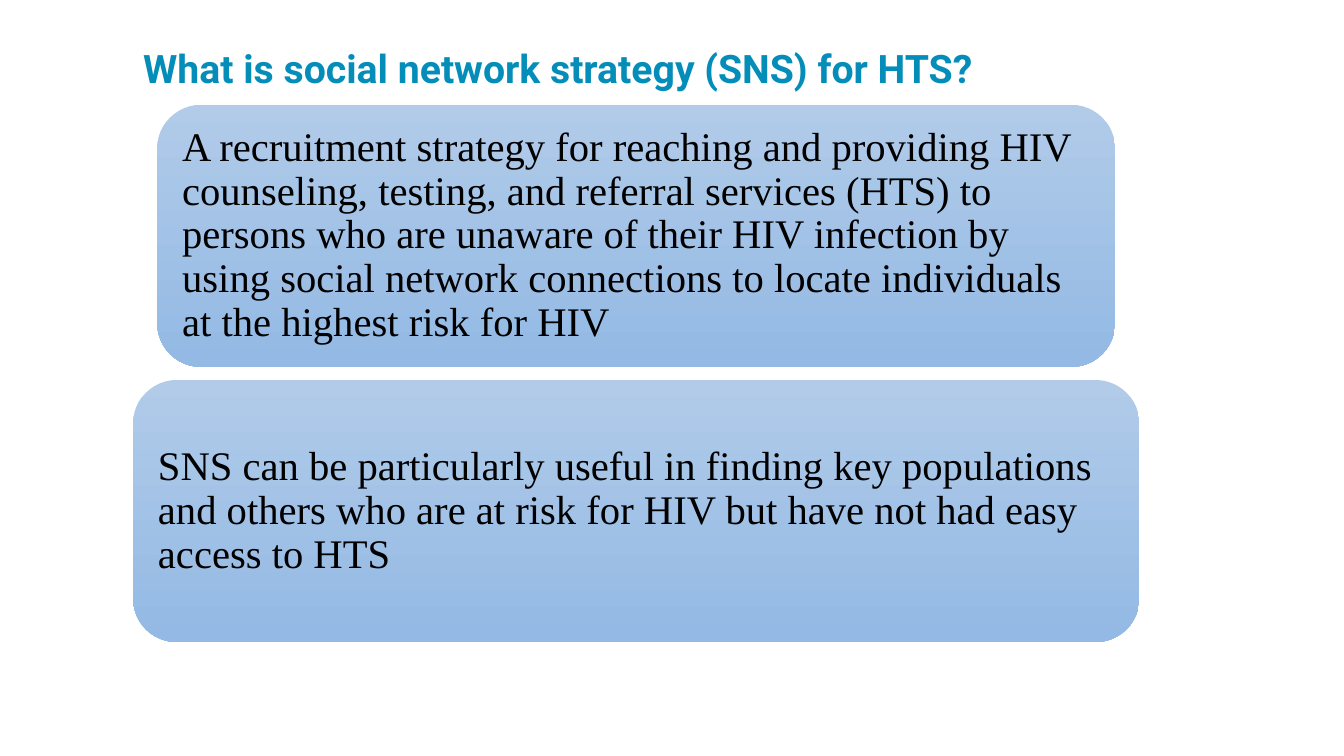
import pptx
import pptx.dml.color
import pptx.enum.shapes
import pptx.enum.text
import pptx.util
from pptx.util import Inches

TITLE = "What is social network strategy (SNS) for HTS?"
PANELS = [
    ((1.56, 1.04, 9.5, 2.6),
     "A recruitment strategy for reaching and providing HIV counseling, testing, "
     "and referral services (HTS) to persons who are unaware of their HIV infection "
     "by using social network connections to locate individuals at the highest risk for HIV"),
    ((1.32, 3.77, 9.98, 2.6),
     "SNS can be particularly useful in finding key populations and others who are "
     "at risk for HIV but have not had easy access to HTS"),
]


def color(value):
    """Return the colour for a hex string."""
    return pptx.dml.color.RGBColor.from_string(value)


def write_text(frame, text, font, size, ink, bold=False):
    """Fill a frame with one left-aligned, vertically centred paragraph."""
    frame.text = text
    frame.word_wrap = True
    frame.auto_size = pptx.enum.text.MSO_AUTO_SIZE.NONE
    frame.vertical_anchor = pptx.enum.text.MSO_ANCHOR.MIDDLE
    para = frame.paragraphs[0]
    para.alignment = pptx.enum.text.PP_ALIGN.LEFT
    para.line_spacing = 0.9
    span = para.runs[0]
    span.font.name = font
    span.font.size = pptx.util.Pt(size)
    span.font.bold = bold
    span.font.color.rgb = color(ink)


def add_title(page, box):
    """Place and format the slide title in the given box."""
    title = page.shapes.title
    title.left, title.top, title.width, title.height = map(Inches, box)
    write_text(title.text_frame, TITLE, "Roboto", 28, "048DB8", bold=True)


def add_panel(page, box, text):
    """Draw a rounded gradient panel with its statement."""
    panel = page.shapes.add_shape(
        pptx.enum.shapes.MSO_SHAPE.ROUNDED_RECTANGLE, *map(Inches, box))
    panel.shadow.inherit = False
    panel.line.fill.background()
    panel.fill.gradient()
    panel.fill.gradient_angle = 270
    for stop, shade in zip(panel.fill.gradient_stops, ("B1CBE9", "93B9E4")):
        stop.color.rgb = color(shade)
    frame = panel.text_frame
    frame.margin_left = frame.margin_right = Inches(0.12)
    frame.margin_top = frame.margin_bottom = Inches(0.12)
    write_text(frame, text, "Times New Roman", 29, "000000")


def main():
    """Build the slide and save the deck."""
    deck = pptx.Presentation()
    deck.slide_width, deck.slide_height = Inches(13.33), Inches(7.5)
    page = deck.slides.add_slide(deck.slide_layouts.get_by_name("Title Only"))
    add_title(page, (1.32, 0.4, 10.33, 0.6))
    for box, text in PANELS:
        add_panel(page, box, text)
    deck.save("out.pptx")


if __name__ == "__main__":
    main()
